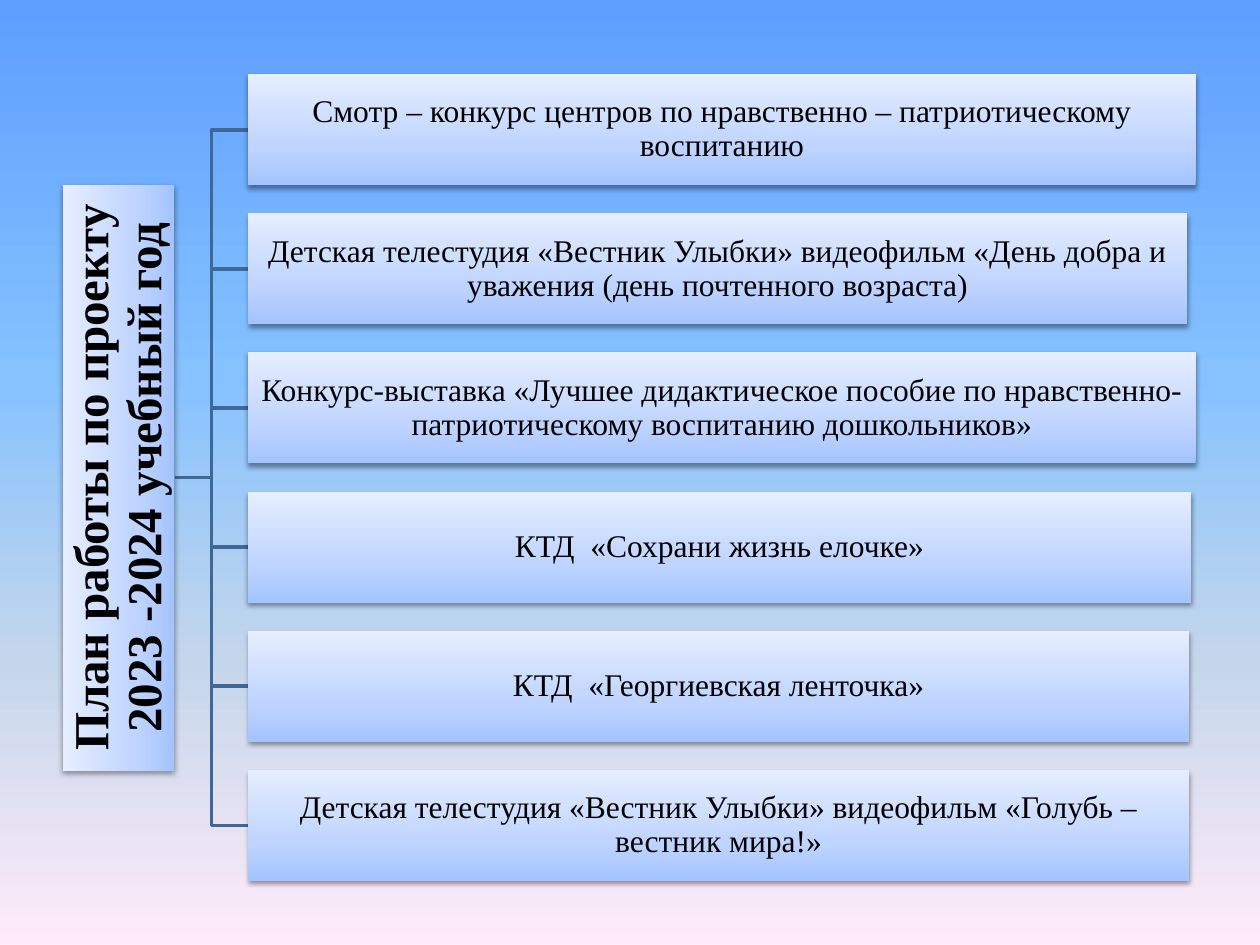
from dataclasses import dataclass

from lxml.etree import SubElement
from pptx import Presentation
from pptx.dml.color import RGBColor
from pptx.enum.shapes import MSO_SHAPE
from pptx.enum.text import MSO_ANCHOR, PP_ALIGN
from pptx.oxml.ns import qn
from pptx.util import Pt

HUES = {
    "sky": "5E9EFF", "azure": "85C2FF", "mist": "C4D6EB", "blush": "FFEBFA",
    "base": "A4C4FF", "mid": "BFD4FF", "pale": "E6EEFF",
    "line": "3F6797", "text": "000000",
}
BACK = [(0, "sky"), (40, "azure"), (70, "mist"), (100, "blush")]
PANEL = [(0, "base"), (35, "mid"), (100, "pale")]

LEFT, TOP, STEP, TALL = 141.8, 42.4, 79.5, 63.5
HEAD_X, HEAD_WIDE = 68, 334.8
START = HEAD_X + TALL / 2
BEND = (START + LEFT) / 2


@dataclass
class Box:
    text: str
    left: float
    top: float
    wide: float
    turn: float = 0
    size: float = 18
    bold: bool = False
    inset: float = 0.9


PLANS = [
    ("Смотр – конкурс центров по нравственно – патриотическому воспитанию", 541.5),
    ("Детская телестудия «Вестник Улыбки» видеофильм «День добра и уважения "
     "(день почтенного возраста)", 536.5),
    ("Конкурс-выставка «Лучшее дидактическое пособие по "
     "нравственно-патриотическому воспитанию дошкольников»", 541.5),
    ("КТД  «Сохрани жизнь елочке»", 538.8),
    ("КТД  «Георгиевская ленточка»", 537.8),
    ("Детская телестудия «Вестник Улыбки» видеофильм «Голубь – вестник мира!»", 537.8),
]


def shade(fill, root, stops: list, angle: float) -> None:
    fill.gradient()
    fill.gradient_angle = angle
    group = root.find(".//" + qn("a:gsLst"))
    for old in list(group):
        group.remove(old)
    for place, hue in stops:
        stop = SubElement(group, qn("a:gs"), pos=str(place * 1000))
        SubElement(stop, qn("a:srgbClr"), val=HUES[hue])


def cast(shape) -> None:
    shape.shadow.inherit = False
    group = shape.element.spPr.find(qn("a:effectLst"))
    drop = SubElement(group, qn("a:outerShdw"), blurRad=str(Pt(3.1)),
                      dist=str(Pt(1.6)), dir="5400000", rotWithShape="0")
    tint = SubElement(drop, qn("a:srgbClr"), val=HUES["text"])
    SubElement(tint, qn("a:alpha"), val="38000")


def write(shape, text: str, *, size: float, bold: bool, inset: float) -> None:
    frame = shape.text_frame
    frame.word_wrap = True
    frame.vertical_anchor = MSO_ANCHOR.MIDDLE
    frame.margin_left = frame.margin_right = Pt(inset)
    frame.margin_top = frame.margin_bottom = Pt(inset)
    line = frame.paragraphs[0]
    line.alignment = PP_ALIGN.CENTER
    line.line_spacing = 0.9
    run = line.add_run()
    run.text = text
    run.font.name = "Times New Roman"
    run.font.size = Pt(size)
    run.font.bold = bold
    run.font.color.rgb = RGBColor.from_string(HUES["text"])


def panel(slide, box: Box) -> None:
    shape = slide.shapes.add_shape(MSO_SHAPE.RECTANGLE, Pt(box.left), Pt(box.top),
                                   Pt(box.wide), Pt(TALL))
    shape.rotation = box.turn
    shade(shape.fill, shape.element, PANEL, 90)
    shape.line.fill.background()
    cast(shape)
    write(shape, box.text, size=box.size, bold=box.bold, inset=box.inset)


def branch(slide, start: float, end: float) -> None:
    pen = slide.shapes.build_freeform(Pt(START), Pt(start))
    spots = [(BEND, start), (BEND, end), (LEFT, end)]
    pen.add_line_segments([(Pt(x), Pt(y)) for x, y in spots], close=False)
    shape = pen.convert_to_shape()
    shape.fill.background()
    shape.line.color.rgb = RGBColor.from_string(HUES["line"])
    shape.line.width = Pt(2)
    shape.shadow.inherit = False


def main() -> None:
    deck = Presentation()
    deck.slide_width, deck.slide_height = Pt(720), Pt(540)
    slide = deck.slides.add_slide(deck.slide_layouts[6])
    shade(slide.background.fill, slide.element, BACK, 270)

    tops = [TOP + STEP * i for i in range(len(PLANS))]
    mids = [top + TALL / 2 for top in tops]
    heart = (mids[0] + mids[-1]) / 2
    for mid in reversed(mids):
        branch(slide, heart, mid)

    panel(slide, Box("План работы по проекту 2023 -2024 учебный год",
                     HEAD_X - HEAD_WIDE / 2, heart - TALL / 2, HEAD_WIDE,
                     turn=270, size=28, bold=True, inset=1.4))
    for (text, wide), top in zip(PLANS, tops):
        panel(slide, Box(text, LEFT, top, wide))
    deck.save("out.pptx")


if __name__ == "__main__":
    main()
